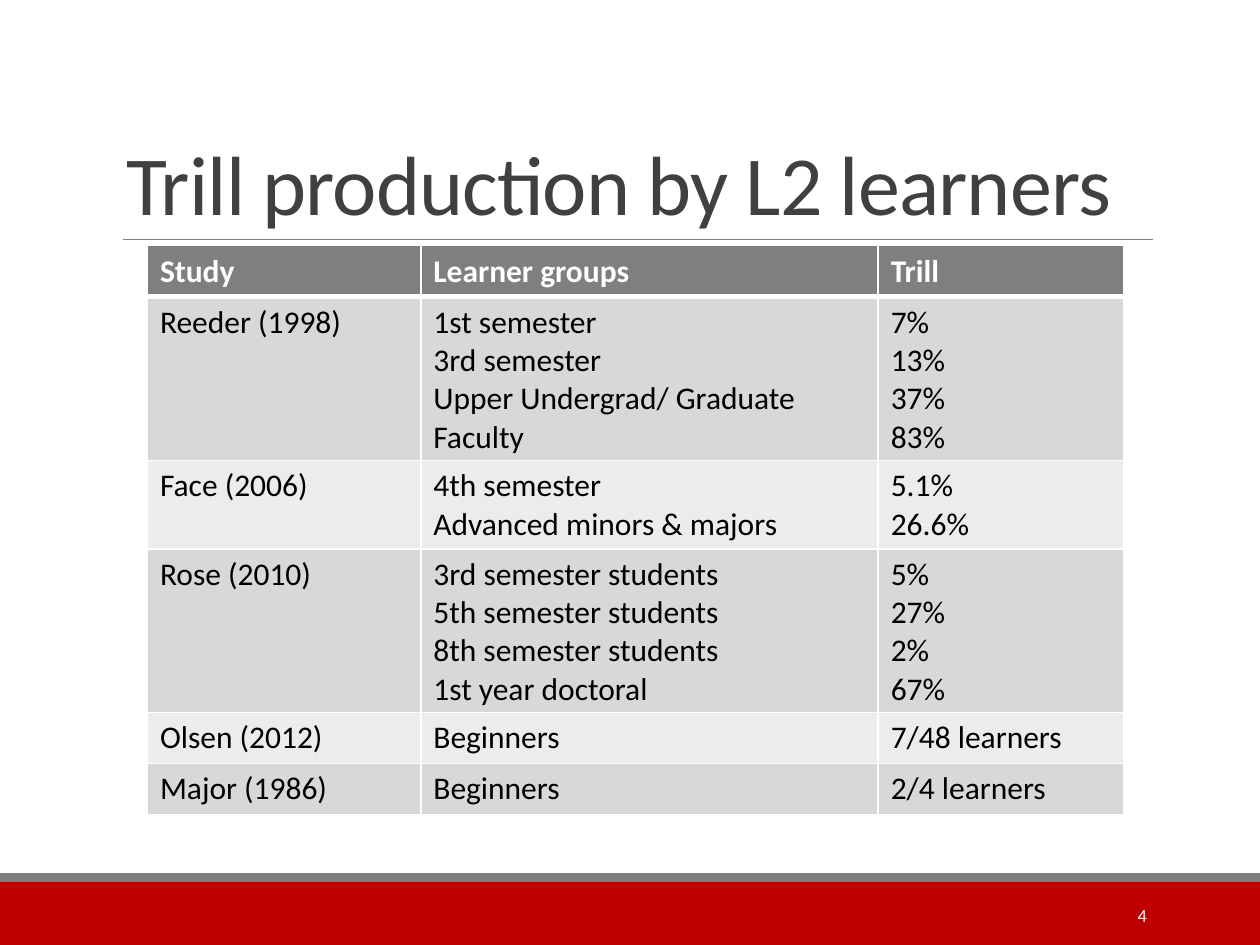
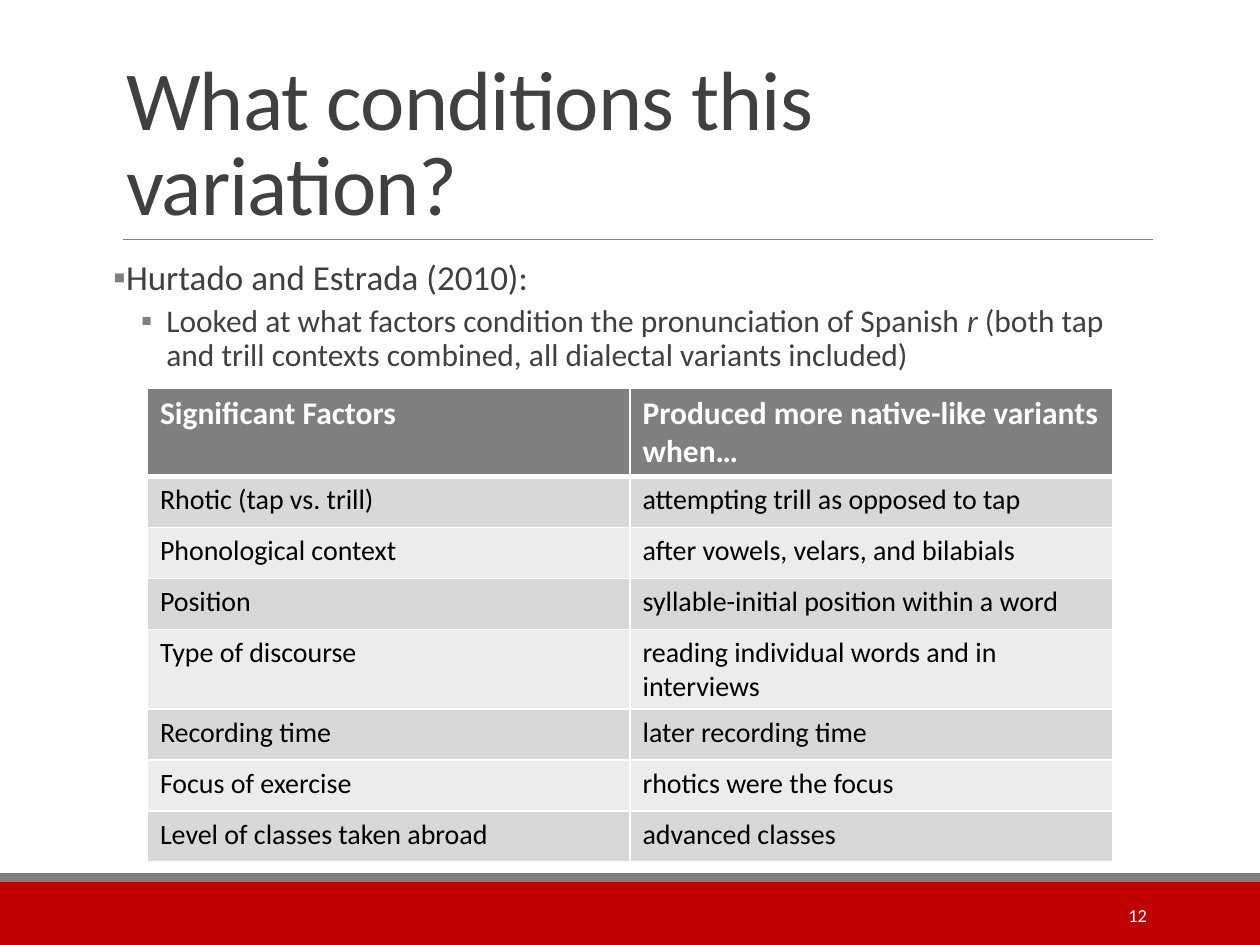
from pptx import Presentation
from pptx.dml.color import RGBColor
from pptx.enum.shapes import MSO_CONNECTOR, MSO_SHAPE
from pptx.enum.text import MSO_ANCHOR, MSO_AUTO_SIZE, PP_ALIGN
from pptx.oxml.ns import qn
from pptx.util import Inches, Pt
from lxml.etree import SubElement

FONT = "Calibri"
RED = RGBColor(0xC0, 0x00, 0x00)
GRAY = RGBColor(0x7F, 0x7F, 0x7F)
RULE = RGBColor(0x80, 0x80, 0x80)
DARK = RGBColor(0x40, 0x40, 0x40)
BLACK = RGBColor(0x00, 0x00, 0x00)
WHITE = RGBColor(0xFF, 0xFF, 0xFF)
STRIPES = RGBColor(0xD8, 0xD8, 0xD8), RGBColor(0xEC, 0xEC, 0xEC)

BANDS = [(7, 0.5, RED), (6.93, 0.07, GRAY)]

SLIDES = [
    {
        "title": "Trill production by L2 learners",
        "number": "4",
        "bullets": [],
        "top": 1.95,
        "columns": [2.17, 3.63, 1.95],
        "size": 18,
        "rows": [
            ("Study", "Learner groups", "Trill"),
            ("Reeder (1998)",
             "1st semester\n3rd semester\nUpper Undergrad/ Graduate Faculty",
             "7%\n13%\n37%\n83%"),
            ("Face (2006)", "4th semester\nAdvanced minors & majors", "5.1%\n26.6%"),
            ("Rose (2010)",
             "3rd semester students\n5th semester students\n"
             "8th semester students\n1st year doctoral",
             "5%\n27%\n2%\n67%"),
            ("Olsen (2012)", "Beginners", "7/48 learners"),
            ("Major (1986)", "Beginners", "2/4 learners"),
        ],
    },
    {
        "title": "What conditions this variation?",
        "number": "12",
        "bullets": [
            (0, ["Hurtado and Estrada (2010):"]),
            (1, ["Looked at what factors condition the pronunciation of Spanish ",
                 "r ",
                 "(both tap and trill contexts combined, all dialectal variants included)"]),
        ],
        "top": 3.08,
        "columns": [3.83, 3.83],
        "size": 16,
        "rows": [
            ("Significant Factors", "Produced more native-like variants when…"),
            ("Rhotic (tap vs. trill)", "attempting trill as opposed to tap"),
            ("Phonological context", "after vowels, velars, and bilabials"),
            ("Position", "syllable-initial position within a word"),
            ("Type of discourse", "reading individual words and in interviews"),
            ("Recording time", "later recording time"),
            ("Focus of exercise", "rhotics were the focus"),
            ("Level of classes taken abroad", "advanced classes"),
        ],
    },
]

BULLET_LEVELS = [
    {"size": 20, "left": 0.1, "hang": 0.1, "before": 12, "after": 2},
    {"size": 18, "left": 0.42, "hang": 0.2, "before": 2, "after": 4},
]


def write(p, text, size=18, color=BLACK, bold=False, italic=False, align=None, spacing=None):
    r = p.add_run()
    r.text = text
    r.font.name, r.font.size = FONT, Pt(size)
    r.font.bold, r.font.italic = bold, italic
    r.font.color.rgb = color
    if align is not None:
        p.alignment = align
    if spacing is not None:
        r.font._element.set("spc", str(spacing))


def place(sp, left, top, width, height):
    sp.left, sp.top = Inches(left), Inches(top)
    sp.width, sp.height = Inches(width), Inches(height)


def add_box(s, left, top, width, height, anchor):
    sp = s.shapes.add_textbox(*map(Inches, (left, top, width, height)))
    tf = sp.text_frame
    tf.word_wrap = True
    tf.vertical_anchor = anchor
    return tf


def add_frame(s, title, number):
    for top, height, color in BANDS:
        sp = s.shapes.add_shape(MSO_SHAPE.RECTANGLE, 0, Inches(top), Inches(10), Inches(height))
        sp.shadow.inherit = False
        sp.fill.solid()
        sp.fill.fore_color.rgb = color
        sp.line.fill.background()

    rule = s.shapes.add_connector(
        MSO_CONNECTOR.STRAIGHT, *map(Inches, (0.98, 1.9, 9.15, 1.9)))
    rule.line.color.rgb = RULE
    rule.line.width = Pt(0.5)
    SubElement(rule._element.spPr, qn("a:effectLst"))

    place(s.shapes.title, 0.9, 0.31, 8.25, 1.59)
    tf = s.shapes.title.text_frame
    tf.word_wrap = True
    tf.auto_size = MSO_AUTO_SIZE.NONE
    tf.vertical_anchor = MSO_ANCHOR.BOTTOM
    p = tf.paragraphs[0]
    p.line_spacing = 0.85
    write(p, title, size=48, color=DARK, align=PP_ALIGN.LEFT, spacing=-50)

    tf = add_box(s, 8.12, 7.06, 1.08, 0.4, MSO_ANCHOR.MIDDLE)
    write(tf.paragraphs[0], number, size=10.5, color=WHITE, align=PP_ALIGN.RIGHT)


def add_bullets(s, bullets):
    tf = add_box(s, 0.9, 2.02, 8.25, 4.4, MSO_ANCHOR.TOP)
    tf.margin_left = tf.margin_right = 0
    for i, (level, parts) in enumerate(bullets):
        p = tf.add_paragraph() if i else tf.paragraphs[0]
        fmt = BULLET_LEVELS[level]
        p.level = level
        p.line_spacing = 0.9
        p.space_before, p.space_after = Pt(fmt["before"]), Pt(fmt["after"])
        pPr = p._p.get_or_add_pPr()
        pPr.set("marL", str(Inches(fmt["left"])))
        pPr.set("indent", str(-Inches(fmt["hang"])))
        SubElement(SubElement(pPr, qn("a:buClr")), qn("a:srgbClr"), val=str(GRAY))
        SubElement(pPr, qn("a:buFont"), typeface=FONT)
        SubElement(pPr, qn("a:buChar"), char="▪")
        for part in parts:
            write(p, part, size=fmt["size"], color=DARK, italic=part == "r ")


def set_borders(cell, top, bottom):
    tcPr = cell._tc.get_or_add_tcPr()
    for side, width in (("L", 1), ("R", 1), ("T", top), ("B", bottom)):
        ln = SubElement(tcPr, qn("a:ln" + side), w=str(Pt(width)))
        SubElement(SubElement(ln, qn("a:solidFill")), qn("a:srgbClr"), val=str(WHITE))


def add_grid(s, rows, columns, top, size):
    row_height = 0.405
    table = s.shapes.add_table(
        len(rows), len(columns), Inches(1.17), Inches(top),
        Inches(sum(columns)), Inches(row_height * len(rows))).table
    for column, width in zip(table.columns, columns):
        column.width = Inches(width)
    for i, row in enumerate(rows):
        header = i == 0
        table.rows[i].height = Inches(row_height)
        for j, text in enumerate(row):
            cell = table.cell(i, j)
            set_borders(cell, 3 if i == 1 else 1, 3 if header else 1)
            cell.fill.solid()
            cell.fill.fore_color.rgb = GRAY if header else STRIPES[(i - 1) % 2]
            for k, line in enumerate(text.split("\n")):
                tf = cell.text_frame
                p = tf.add_paragraph() if k else tf.paragraphs[0]
                write(p, line, size=18 if header else size,
                      color=WHITE if header else BLACK, bold=header)


def main():
    prs = Presentation()
    prs.slide_width, prs.slide_height = Inches(10), Inches(7.5)
    for content in SLIDES:
        s = prs.slides.add_slide(prs.slide_layouts[5])
        add_frame(s, content["title"], content["number"])
        if content["bullets"]:
            add_bullets(s, content["bullets"])
        add_grid(s, content["rows"], content["columns"], content["top"], content["size"])
    prs.save("out.pptx")


if __name__ == "__main__":
    main()
